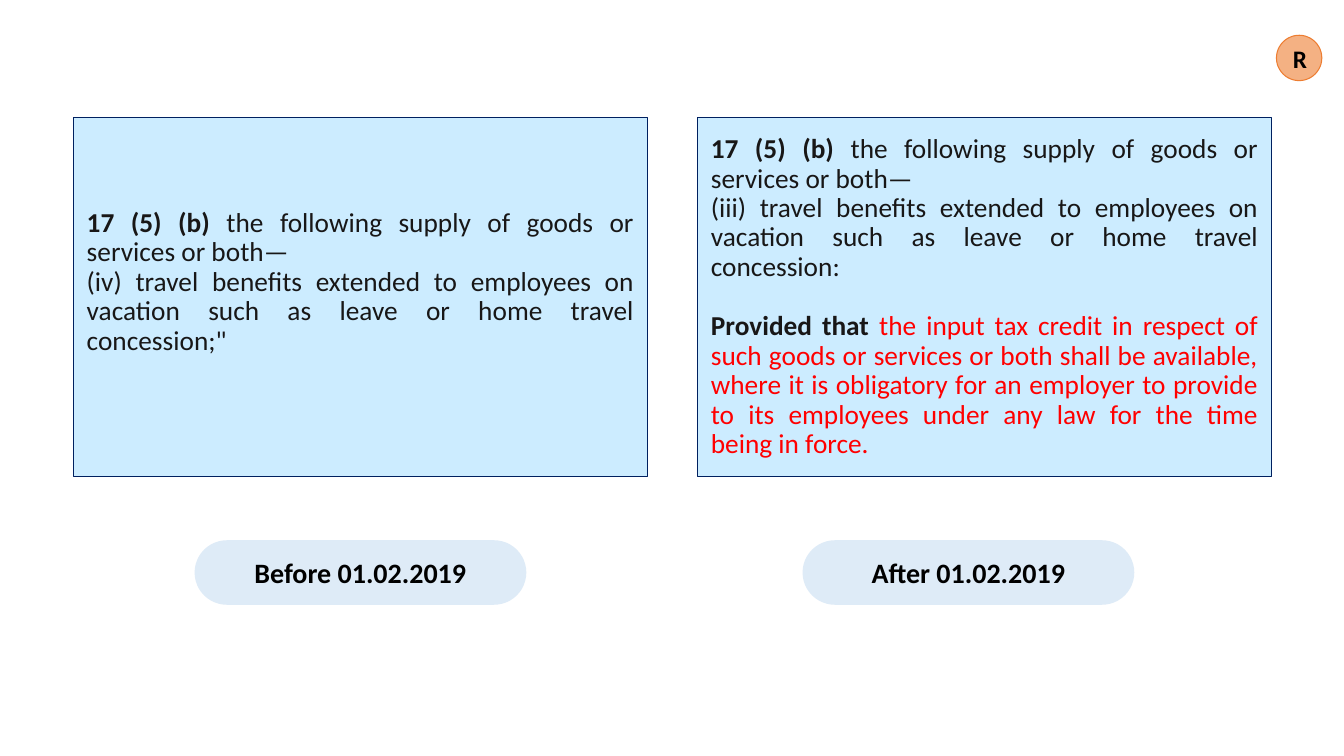
from pptx import Presentation
from pptx.dml.color import RGBColor
from pptx.enum.shapes import MSO_SHAPE
from pptx.enum.text import MSO_ANCHOR, PP_ALIGN
from pptx.util import Inches, Pt

RECT, PILL, OVAL = MSO_SHAPE.RECTANGLE, MSO_SHAPE.ROUNDED_RECTANGLE, MSO_SHAPE.OVAL
MIDDLE, CENTER, JUSTIFY = MSO_ANCHOR.MIDDLE, PP_ALIGN.CENTER, PP_ALIGN.JUSTIFY

# Content: each paragraph is a list of (text, style) runs
LEAD = [("17 (5) (b)", "strong"),
        (" the following supply of goods or services or both—", "body")]
BEFORE = [
    LEAD,
    [("(iv) travel benefits extended to employees on vacation such as leave "
      "or home travel concession;\"", "body")],
]
AFTER = [
    LEAD,
    [("(iii) travel benefits extended to employees on vacation such as leave "
      "or home travel concession:", "body")],
    [("Provided that ", "strong"),
     ("the input tax credit in respect of such goods or services or both shall "
      "be available, where it is obligatory for an employer to provide to its "
      "employees under any law for the time being in force.", "new")],
]
# Left edge of box, left edge of label, label, clause, bottom inset
SIDES = [
    (0.73, 1.93, "Before 01.02.2019", BEFORE, 0.37),
    (6.92, 7.96, "After 01.02.2019", AFTER, 0.07),
]

# Theme: colours and type
THEME = {
    "box": ("CCECFF", "002060"),
    "label": ("DEEBF7", None),
    "badge": ("F4B183", "ED7D31"),
    "fonts": {
        "strong": {"size": 19.5, "bold": True, "color": "181717"},
        "body": {"size": 19.5, "bold": False, "color": "181717"},
        "new": {"size": 19.5, "bold": False, "color": "FF0000"},
        "tag": {"size": 20, "bold": True, "color": "000000"},
        "mark": {"size": 18, "bold": True, "color": "000000"},
    },
}
CLAUSE = {"alignment": JUSTIFY, "line_spacing": 0.9}
TITLE = {"alignment": CENTER}
GAP = Pt(21.4)  # one line of clause text


def add_part(slide, kind, area, look, insets):
    part = slide.shapes.add_shape(kind, *(Inches(v) for v in area))
    part.shadow.inherit = False
    fill, line = THEME[look]
    part.fill.solid()
    part.fill.fore_color.rgb = RGBColor.from_string(fill)
    if line:
        part.line.color.rgb = RGBColor.from_string(line)
        part.line.width = Pt(0.75)
    else:
        part.line.fill.background()
    frame = part.text_frame
    frame.word_wrap = True
    frame.vertical_anchor = MIDDLE
    for side, inset in zip(("left", "top", "right", "bottom"), insets):
        setattr(frame, "margin_" + side, Inches(inset))
    return part


def add_text(frame, paras, form):
    for i, runs in enumerate(paras):
        para = frame.add_paragraph() if i else frame.paragraphs[0]
        for name, value in form.items():
            setattr(para, name, value)
        if i == 2:
            para.space_before = GAP
        for text, style in runs:
            run = para.add_run()
            run.text = text
            face = THEME["fonts"][style]
            font = {"name": "Calibri", "size": Pt(face["size"]), "bold": face["bold"]}
            for name, value in font.items():
                setattr(run.font, name, value)
            run.font.color.rgb = RGBColor.from_string(face["color"])


def main():
    deck = Presentation()
    deck.slide_width, deck.slide_height = Inches(13.33), Inches(7.5)
    slide = deck.slides.add_slide(deck.slide_layouts[6])

    # Clause boxes with their date labels
    for box_x, tag_x, tag, clause, base in SIDES:
        box = add_part(slide, RECT, (box_x, 1.17, 5.69, 3.56), "box",
                       (0.13, 0.07, 0.13, base))
        add_text(box.text_frame, clause, CLAUSE)
        label = add_part(slide, PILL, (tag_x, 5.36, 3.29, 0.64), "label", [0.1] * 4)
        label.adjustments[0] = 0.5
        add_text(label.text_frame, [[(tag, "tag")]], TITLE)

    # Corner badge
    badge = add_part(slide, OVAL, (12.66, 0.35, 0.45, 0.45), "badge", [0.1] * 4)
    add_text(badge.text_frame, [[("R", "mark")]], TITLE)

    deck.save("out.pptx")


if __name__ == "__main__":
    main()
